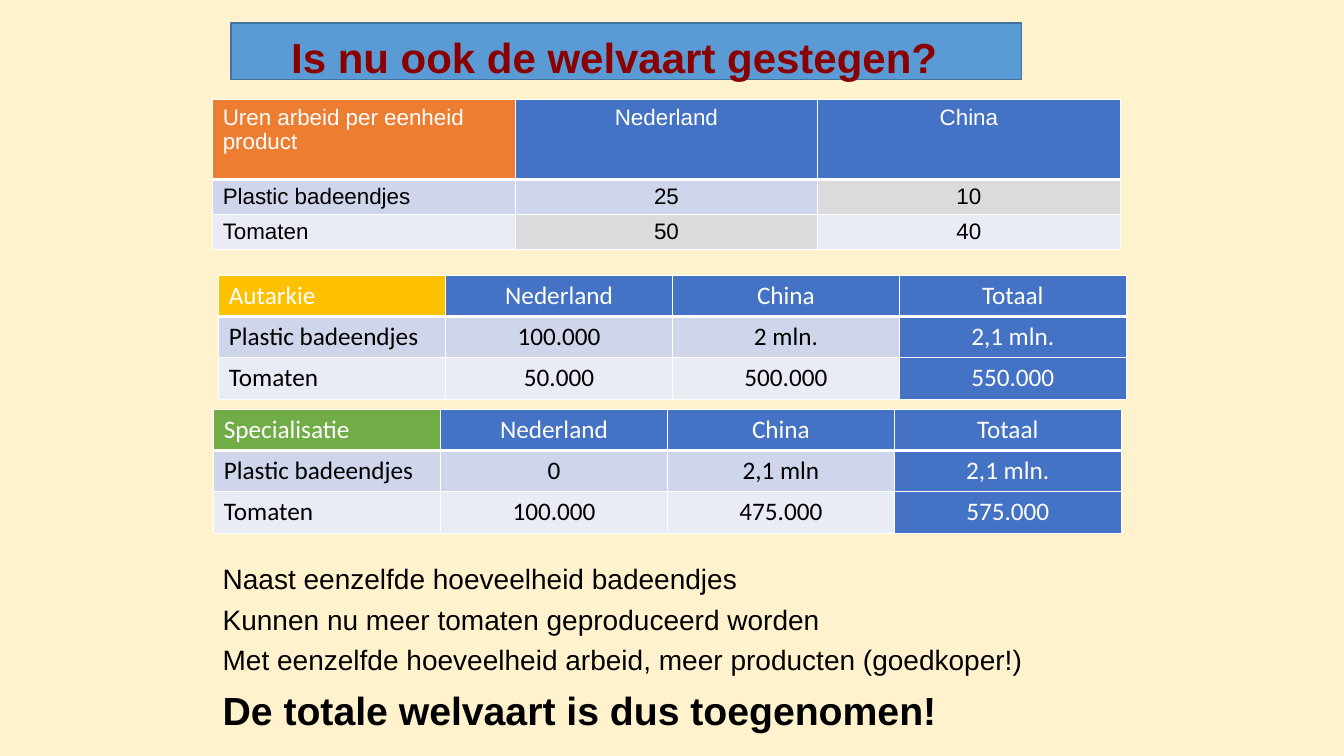
from lxml import etree
from pptx import Presentation, util as u
from pptx.dml.color import RGBColor
from pptx.enum import shapes, text
from pptx.oxml.ns import qn

CREAM = RGBColor(0xFF, 0xF2, 0xCC)
SKY = RGBColor(0x5B, 0x9B, 0xD5)
SKY_EDGE = RGBColor(0x43, 0x73, 0x9E)
DARK_RED = RGBColor(0x8A, 0x00, 0x00)
BLUE = RGBColor(0x44, 0x72, 0xC4)
ORANGE = RGBColor(0xED, 0x7D, 0x31)
GOLD = RGBColor(0xFF, 0xC0, 0x00)
GREEN = RGBColor(0x70, 0xAD, 0x47)
GREY = RGBColor(0xDB, 0xDB, 0xDB)
BANDS = RGBColor(0xCF, 0xD5, 0xEA), RGBColor(0xE9, 0xEB, 0xF5)
WHITE = RGBColor(0xFF, 0xFF, 0xFF)
BLACK = RGBColor(0x00, 0x00, 0x00)

PRODUCTS = "Plastic badeendjes", "Tomaten"
COUNTRIES = "Nederland", "China"


def inches(*lengths):
    """Convert lengths in inches to slide units."""
    return [u.Inches(length) for length in lengths]


def style(paragraph, face, size, color, bold=False):
    """Set the font of a whole paragraph."""
    font = paragraph.font
    font.name, font.size, font.bold = face, u.Pt(size), bold
    font.color.rgb = color


def add_title(slide, box, wording):
    """Place the heading bar with its tabbed title."""
    bar = slide.shapes.add_shape(shapes.MSO_SHAPE.RECTANGLE, *inches(*box))
    bar.shadow.inherit = False
    bar.fill.solid()
    bar.fill.fore_color.rgb = SKY
    bar.line.color.rgb = SKY_EDGE
    bar.line.width = u.Pt(1)
    frame = bar.text_frame
    frame.word_wrap = True
    frame.vertical_anchor = text.MSO_ANCHOR.TOP
    frame.margin_top, frame.margin_bottom = inches(0.08, 0)
    heading = frame.paragraphs[0]
    heading.text = "\t" + wording
    heading.alignment = text.PP_ALIGN.LEFT
    style(heading, "Arial", 30, DARK_RED, True)


def add_borders(cell, bottom):
    """Draw white cell edges, with the bottom edge in its own width."""
    properties = cell._tc.get_or_add_tcPr()
    for edge, width in (("lnL", 1), ("lnR", 1), ("lnT", 1), ("lnB", bottom)):
        line = etree.SubElement(properties, qn(f"a:{edge}"), w=str(u.Pt(width)))
        fill = etree.SubElement(line, qn("a:solidFill"))
        etree.SubElement(fill, qn("a:srgbClr"), val=str(WHITE))


def add_grid(slide, box, heights, corner, corner_fill, columns, face, size, highlights=()):
    """Place a product table whose columns map a heading to its two values."""
    rows = [(corner, *columns)]
    rows += zip(PRODUCTS, *columns.values())
    grid = slide.shapes.add_table(len(rows), len(rows[0]), *inches(*box)).table
    grid.first_row = grid.horz_banding = False
    for row, height in zip(grid.rows, heights):
        row.height = u.Inches(height)
    for r, values in enumerate(rows):
        for c, value in enumerate(values):
            cell = grid.cell(r, c)
            header, total = r == 0, rows[0][c] == "Totaal"
            add_borders(cell, 3 if header else 1)
            if r == c == 0:
                fill = corner_fill
            elif header or total:
                fill = BLUE
            else:
                fill = GREY if (r, c) in highlights else BANDS[r - 1]
            cell.fill.solid()
            cell.fill.fore_color.rgb = fill
            entry = cell.text_frame.paragraphs[0]
            entry.text = value
            entry.alignment = text.PP_ALIGN.CENTER if c else text.PP_ALIGN.LEFT
            style(entry, face, size, WHITE if header or total else BLACK)


def add_conclusion(slide, box, remarks, verdict):
    """Place the remarks and the bold closing verdict."""
    frame = slide.shapes.add_textbox(*inches(*box)).text_frame
    frame.word_wrap = True
    frame.margin_top = u.Inches(0.09)
    lines = [(remark, 20, False) for remark in remarks] + [(verdict, 28, True)]
    for i, (wording, size, bold) in enumerate(lines):
        line = frame.add_paragraph() if i else frame.paragraphs[0]
        line.text = wording
        if i:
            line.space_before = u.Pt(size / 4)
        style(line, "Arial", size, BLACK, bold)


def add_welfare_slide(deck):
    """Build the slide comparing autarky with specialisation."""
    slide = deck.slides.add_slide(deck.slide_layouts[6])
    slide.background.fill.solid()
    slide.background.fill.fore_color.rgb = CREAM
    add_title(slide, (2.29, 0.23, 7.84, 0.56), "Is nu ook de welvaart gestegen?")

    hours = dict(zip(COUNTRIES, (("25", "50"), ("10", "40"))))
    add_grid(slide, (2.11, 0.99, 9, 1.37), (0.79, 0.29, 0.29),
             "Uren arbeid per eenheid product", ORANGE, hours, "Arial", 16,
             highlights={(1, 2), (2, 1)})

    outputs = (
        (2.17, 2.73, "Autarkie", GOLD,
         (("100.000", "50.000"), ("2 mln.", "500.000"), ("2,1 mln.", "550.000"))),
        (2.12, 4.06, "Specialisatie", GREEN,
         (("0", "100.000"), ("2,1 mln", "475.000"), ("2,1 mln.", "575.000"))),
    )
    for left, top, regime, color, amounts in outputs:
        add_grid(slide, (left, top, 9, 1.22), [0.41] * 3, regime, color,
                 dict(zip((*COUNTRIES, "Totaal"), amounts)), "Calibri", 18)

    add_conclusion(slide, (2.11, 5.48, 9, 1.81), (
        "Naast eenzelfde hoeveelheid badeendjes",
        "Kunnen nu meer tomaten geproduceerd worden",
        "Met eenzelfde hoeveelheid arbeid, meer producten (goedkoper!)",
    ), "De totale welvaart is dus toegenomen!")


def main():
    """Create and save the deck."""
    deck = Presentation()
    deck.slide_width, deck.slide_height = inches(13.33, 7.5)
    add_welfare_slide(deck)
    deck.save("out.pptx")


if __name__ == "__main__":
    main()
